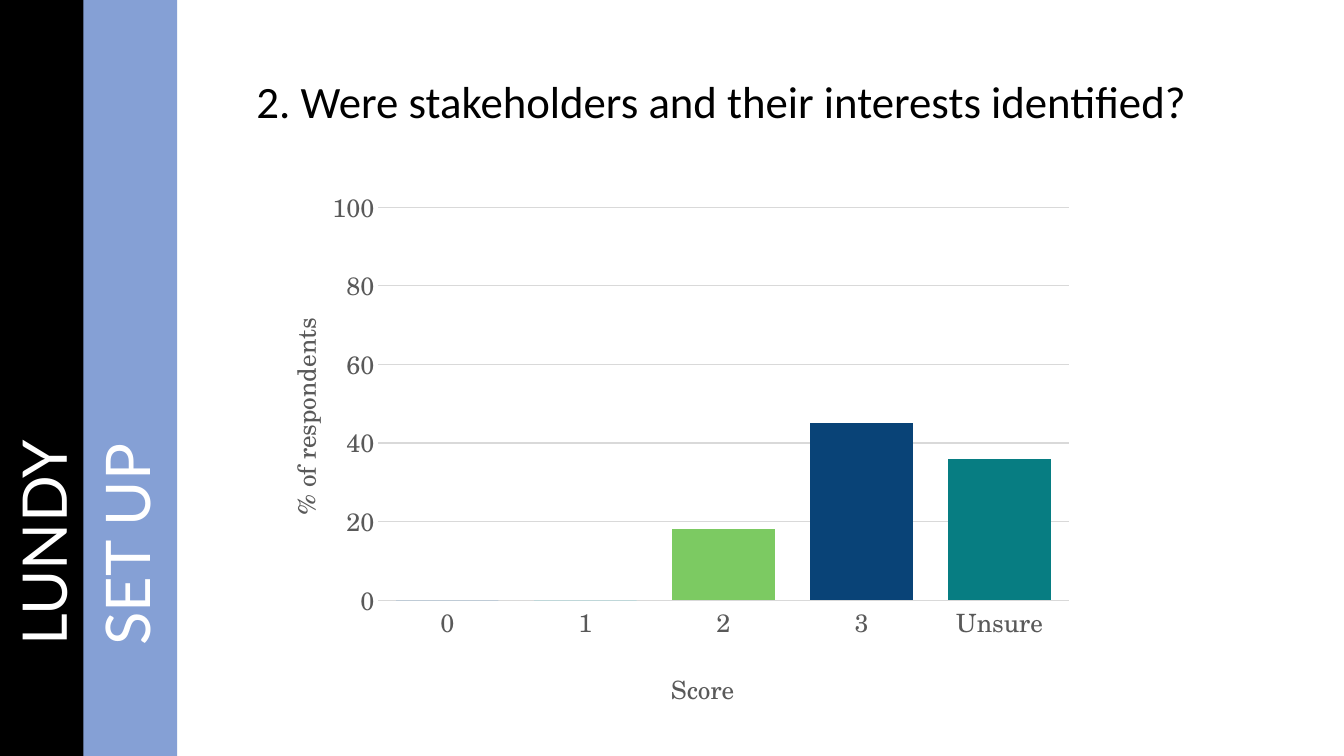
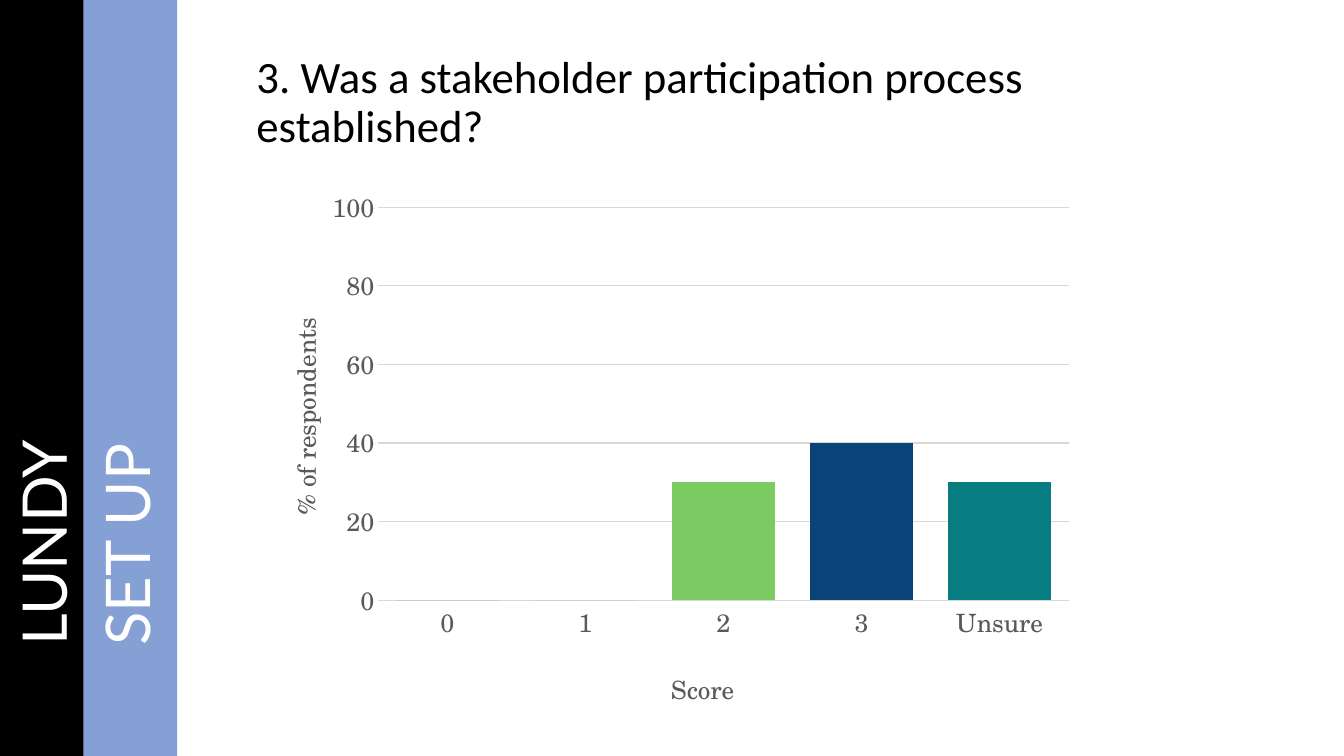
from pptx import Presentation
from pptx.chart.data import CategoryChartData
from pptx.dml.color import RGBColor
from pptx.enum.chart import XL_CHART_TYPE, XL_TICK_MARK
from pptx.enum.shapes import MSO_SHAPE
from pptx.enum.text import MSO_ANCHOR, MSO_AUTO_SIZE, PP_ALIGN
from pptx.oxml import parse_xml
from pptx.oxml.ns import nsdecls, qn
from pptx.util import Pt

BLACK = RGBColor(0x00, 0x00, 0x00)
WHITE = RGBColor(0xFF, 0xFF, 0xFF)
PERIWINKLE = RGBColor(0x85, 0xA0, 0xD5)
AXIS_GRAY = RGBColor(0x59, 0x59, 0x59)
GRID_GRAY = RGBColor(0xD9, 0xD9, 0xD9)
SCORE_COLORS = {
    "0": RGBColor(0x0F, 0x6F, 0xC6),
    "1": RGBColor(0x0B, 0xD0, 0xD9),
    "2": RGBColor(0x7C, 0xCA, 0x62),
    "3": RGBColor(0x09, 0x43, 0x77),
    "Unsure": RGBColor(0x07, 0x7D, 0x82),
}

SLIDE_WIDTH, SLIDE_HEIGHT = Pt(960), Pt(540)
BAND_THICKNESS = Pt(67)
BANDS = [("LUNDY", BLACK, Pt(0)), ("SET UP", PERIWINKLE, Pt(59.5))]
QUESTIONS = [
    ("2. Were stakeholders and their interests identified?", (0, 0, 18, 45, 36)),
    ("3. Was a stakeholder participation process established?", (0, 0, 30, 40, 30)),
]


def apply(target, values):
    for attribute, value in values.items():
        setattr(target, attribute, value)


def place(parent, index, **fractions):
    for old_layout in parent.findall(qn("c:layout")):
        parent.remove(old_layout)
    modes = "".join(f'<c:{side}Mode val="edge"/>' for side in "xy")
    sizes = "".join(f'<c:{key} val="{value}"/>' for key, value in fractions.items())
    target = '<c:layoutTarget val="inner"/>' if "w" in fractions else ""
    parent.insert(index, parse_xml(
        f'<c:layout {nsdecls("c")}><c:manualLayout>{target}{modes}{sizes}'
        "</c:manualLayout></c:layout>"))


class SurveyDeck:
    """Holds the shared style and the slide being built."""

    title_font = {"name": "Calibri", "size": Pt(32)}
    band_font = {"name": "Lato", "size": Pt(44)}
    chart_font = {"name": "TeX Gyre Schola", "size": Pt(18), "bold": False}

    def __init__(self):
        self.presentation = Presentation()
        apply(self.presentation, {"slide_width": SLIDE_WIDTH, "slide_height": SLIDE_HEIGHT})
        self.slide = None

    def style_font(self, font, values, color):
        apply(font, values)
        font.color.rgb = color

    def style_line(self, line):
        line.width = Pt(0.75)
        line.color.rgb = GRID_GRAY

    def set_text(self, shape, wording, font, color, frame_values):
        apply(shape.text_frame, {"text": wording, "word_wrap": True,
                                 "vertical_anchor": MSO_ANCHOR.MIDDLE, **frame_values})
        paragraph = shape.text_frame.paragraphs[0]
        apply(paragraph, {"alignment": PP_ALIGN.LEFT, "line_spacing": 0.9})
        self.style_font(paragraph.runs[0].font, font, color)

    def add_question(self, question):
        self.slide = self.presentation.slides.add_slide(self.presentation.slide_layouts[5])
        title = self.slide.shapes.title
        apply(title, {"left": Pt(176), "top": Pt(22), "width": Pt(699), "height": Pt(104)})
        self.set_text(title, question, self.title_font, BLACK,
                      {"auto_size": MSO_AUTO_SIZE.NONE})

    def add_band(self, label, color, edge):
        left = edge + (BAND_THICKNESS - SLIDE_HEIGHT) // 2
        top = (SLIDE_HEIGHT - BAND_THICKNESS) // 2
        band = self.slide.shapes.add_shape(
            MSO_SHAPE.RECTANGLE, left, top, SLIDE_HEIGHT, BAND_THICKNESS)
        band.rotation = 270
        band.shadow.inherit = False
        band.fill.solid()
        band.fill.fore_color.rgb = color
        band.line.fill.background()
        self.set_text(band, label, self.band_font, WHITE, {"margin_left": Pt(79)})

    def style_axis(self, axis, heading, rotation, x, y):
        apply(axis, {"major_tick_mark": XL_TICK_MARK.NONE, "minor_tick_mark": XL_TICK_MARK.NONE})
        self.style_font(axis.tick_labels.font, self.chart_font, AXIS_GRAY)
        frame = axis.axis_title.text_frame
        frame.text = heading
        self.style_font(frame.paragraphs[0].runs[0].font, self.chart_font, AXIS_GRAY)
        frame._txBody.bodyPr.set("rot", str(rotation * 60000))
        place(axis.axis_title._element, 1, x=x, y=y)

    def add_score_chart(self, shares):
        scores = CategoryChartData()
        scores.categories = list(SCORE_COLORS)
        scores.add_series("Series 1", shares)
        chart = self.slide.shapes.add_chart(
            XL_CHART_TYPE.COLUMN_CLUSTERED, Pt(176), Pt(127), Pt(600), Pt(388), scores).chart
        apply(chart, {"has_title": False, "has_legend": False})
        self.style_font(chart.font, self.chart_font, BLACK)
        place(chart._chartSpace.chart.plotArea, 0, x=0.157, y=0.054, w=0.822, h=0.724)

        columns = chart.plots[0]
        apply(columns, {"gap_width": 35, "overlap": -2, "vary_by_categories": False})
        for index, color in enumerate(SCORE_COLORS.values()):
            fill = columns.series[0].points[index].format.fill
            fill.solid()
            fill.fore_color.rgb = color

        self.style_axis(chart.category_axis, "Score", 0, 0.5, 0.895)
        self.style_line(chart.category_axis.format.line)
        share_axis = chart.value_axis
        self.style_axis(share_axis, "% of respondents", -90, 0.04, 0.25)
        apply(share_axis, {"minimum_scale": 0, "maximum_scale": 100, "major_unit": 20,
                           "has_major_gridlines": True})
        share_axis.format.line.fill.background()
        self.style_line(share_axis.major_gridlines.format.line)


def main():
    deck = SurveyDeck()
    for question, shares in QUESTIONS:
        deck.add_question(question)
        deck.add_score_chart(shares)
        for band in BANDS:
            deck.add_band(*band)
    deck.presentation.save("out.pptx")


if __name__ == "__main__":
    main()
